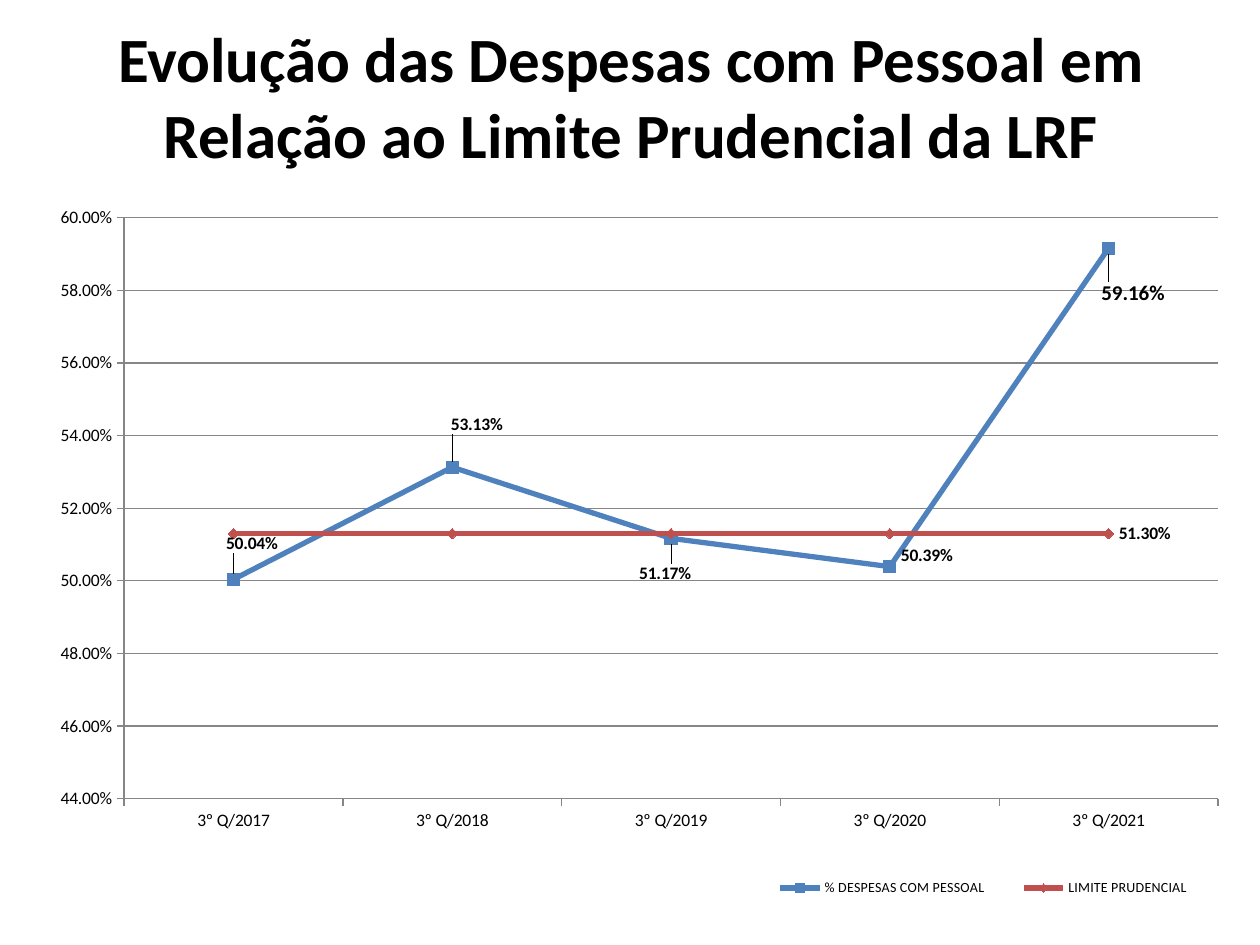
from lxml.etree import SubElement
from pptx import Presentation
from pptx.chart.data import CategoryChartData
from pptx.dml.color import RGBColor
from pptx.enum.chart import (XL_CHART_TYPE, XL_LABEL_POSITION, XL_LEGEND_POSITION,
                             XL_MARKER_STYLE, XL_TICK_MARK)
from pptx.enum.text import MSO_ANCHOR, PP_ALIGN
from pptx.oxml import parse_xml
from pptx.oxml.ns import nsdecls, qn
from pptx.util import Inches, Pt

BLACK = RGBColor(0, 0, 0)
GRAY = RGBColor(0x86, 0x86, 0x86)
BLUE = RGBColor(0x4F, 0x81, 0xBD)
RED = RGBColor(0xC0, 0x50, 0x4D)
FONT = "Calibri"

# Content
TITLE = "Evolução das Despesas com Pessoal em Relação ao Limite Prudencial da LRF"
YEARS = range(2017, 2022)
ABOVE, BELOW, RIGHT = (XL_LABEL_POSITION.ABOVE, XL_LABEL_POSITION.BELOW,
                       XL_LABEL_POSITION.RIGHT)
# Labels: point, side, horizontal and vertical shift as shares of the chart, size
SERIES = [
    dict(name="% DESPESAS COM PESSOAL", values=(0.5004, 0.5313, 0.5117, 0.5039, 0.5916),
         color=BLUE, marker=XL_MARKER_STYLE.SQUARE, size=7,
         labels=[(0, ABOVE, 0.015, -0.02, 10), (1, ABOVE, 0.02, -0.03, 10),
                 (2, BELOW, -0.005, 0.02, 10), (3, RIGHT, 0, -0.015, 10),
                 (4, BELOW, 0.02, 0.03, 12)]),
    dict(name="LIMITE PRUDENCIAL", values=(0.513,) * len(YEARS),
         color=RED, marker=XL_MARKER_STYLE.DIAMOND, size=6,
         labels=[(4, RIGHT, 0, 0, 10)]),
]


def apply(target, **values):
    for name, value in values.items():
        setattr(target, name, value)


def style_font(font, size, bold=False):
    apply(font, name=FONT, size=Pt(size), bold=bold)
    font.color.rgb = BLACK


def make_layout(**values):
    layout = parse_xml(f"<c:layout {nsdecls('c')}/>")
    manual = SubElement(layout, qn("c:manualLayout"))
    for name, value in values.items():
        SubElement(manual, qn(f"c:{name}"), val=str(value))
    return layout


def add_title(slide):
    box = slide.shapes.add_textbox(Inches(0.51), Inches(0.13), Inches(9), Inches(1.25))
    apply(box.text_frame, word_wrap=True, vertical_anchor=MSO_ANCHOR.MIDDLE)
    para = box.text_frame.paragraphs[0]
    para.alignment = PP_ALIGN.CENTER
    span = para.add_run()
    span.text = TITLE
    style_font(span.font, 36, True)


def style_axes(chart):
    value_axis, category_axis = chart.value_axis, chart.category_axis
    apply(value_axis, minimum_scale=0.44, maximum_scale=0.6, major_unit=0.02,
          has_major_gridlines=True)
    apply(value_axis.tick_labels, number_format="0.00%", number_format_is_linked=False)
    for axis in (value_axis, category_axis):
        axis.major_tick_mark = XL_TICK_MARK.OUTSIDE
        style_font(axis.tick_labels.font, 10)
    for part in (value_axis, category_axis, value_axis.major_gridlines):
        part.format.line.color.rgb = GRAY
        part.format.line.width = Pt(0.75)


def style_series(series, content):
    series.smooth = False
    series.format.line.color.rgb = content["color"]
    series.format.line.width = Pt(3)
    apply(series.marker, style=content["marker"], size=content["size"])
    series.marker.format.fill.solid()
    series.marker.format.fill.fore_color.rgb = content["color"]
    series.marker.format.line.color.rgb = content["color"]
    apply(series.data_labels, show_value=False, number_format="0.00%",
          number_format_is_linked=False)
    for index, side, shift_x, shift_y, size in content["labels"]:
        label = series.points[index].data_label
        style_font(label.font, size, True)
        label.position = side
        if shift_x or shift_y:
            entry = series.data_labels._element.xpath(f"c:dLbl[c:idx/@val='{index}']")[0]
            entry.insert(1, make_layout(x=shift_x, y=shift_y))


def add_line_chart(slide):
    data = CategoryChartData(number_format="0.00%")
    data.categories = [f"3º Q/{year}" for year in YEARS]
    for content in SERIES:
        data.add_series(content["name"], content["values"])
    chart = slide.shapes.add_chart(XL_CHART_TYPE.LINE_MARKERS, Inches(0.2), Inches(1.47),
                                   Inches(9.69), Inches(5.75), data).chart
    apply(chart, has_title=False, has_legend=True)
    style_font(chart.font, 10)
    style_axes(chart)
    for series, content in zip(chart.plots[0].series, SERIES):
        style_series(series, content)

    # Legend at the lower right
    legend = chart.legend
    apply(legend, position=XL_LEGEND_POSITION.RIGHT, include_in_layout=False)
    style_font(legend.font, 8)
    for old in legend._element.findall(qn("c:layout")):
        legend._element.remove(old)
    legend._element.find(qn("c:legendPos")).addnext(make_layout(
        xMode="edge", yMode="edge", x=0.59, y=0.94, w=0.39, h=0.06))

    # Inner plot area
    plot_area = chart._chartSpace.chart.plotArea
    for old in plot_area.findall(qn("c:layout")):
        plot_area.remove(old)
    plot_area.insert(0, make_layout(layoutTarget="inner", xMode="edge", yMode="edge",
                                    x=0.081, y=0.045, w=0.896, h=0.802))


def main():
    deck = Presentation()
    apply(deck, slide_width=Inches(10), slide_height=Inches(7.5))
    slide = deck.slides.add_slide(deck.slide_layouts[6])
    add_title(slide)
    add_line_chart(slide)
    deck.save("out.pptx")


if __name__ == "__main__":
    main()
